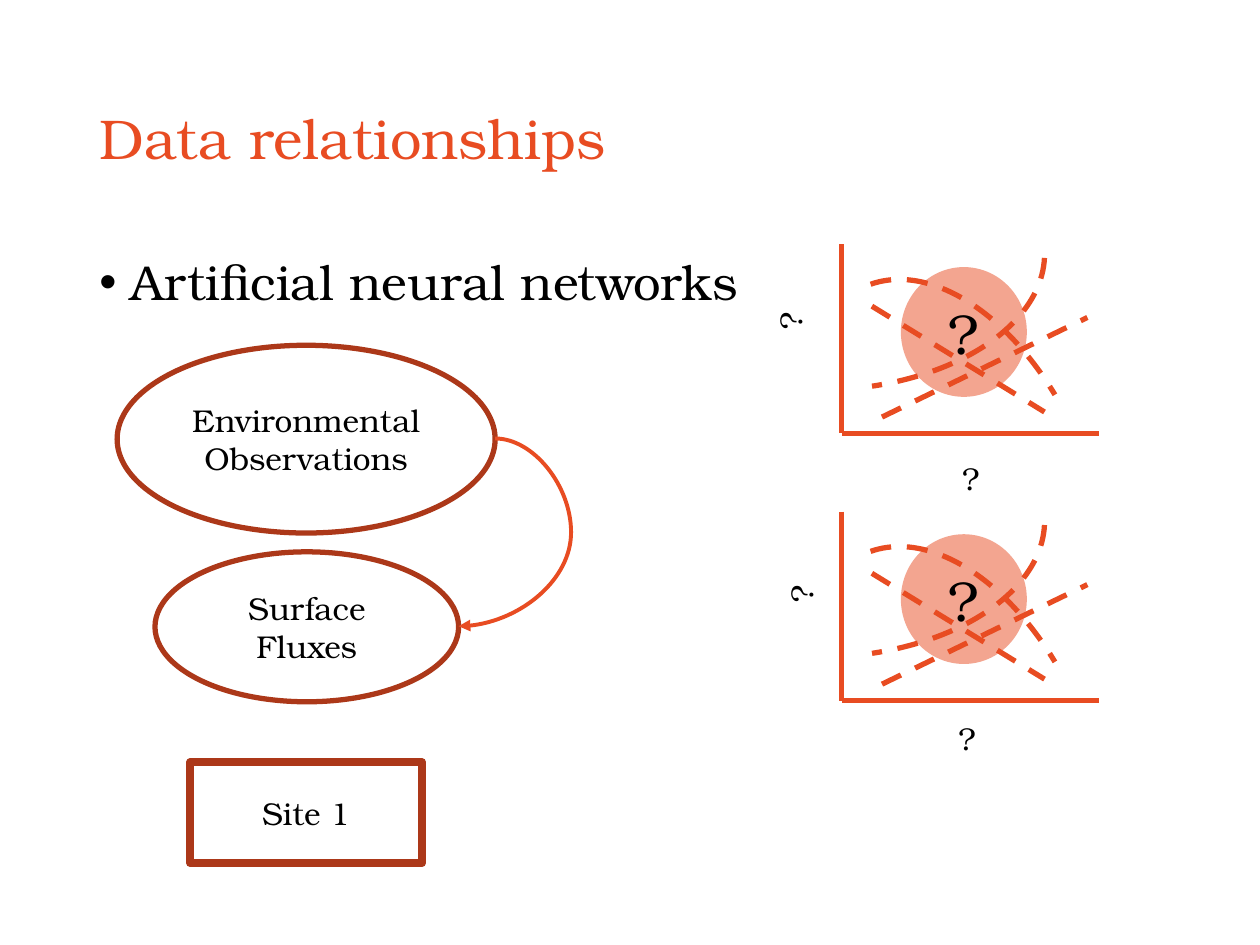
from dataclasses import dataclass
from typing import NamedTuple, Optional

from lxml.etree import SubElement
from pptx import Presentation
from pptx.dml.color import RGBColor
from pptx.enum.dml import MSO_LINE
from pptx.enum.shapes import MSO_CONNECTOR, MSO_SHAPE
from pptx.enum.text import MSO_ANCHOR, PP_ALIGN
from pptx.oxml.ns import qn
from pptx.util import Pt

PX = 9144


@dataclass(frozen=True)
class Theme:
    font: str = "TeX Gyre Bonum"
    accent: RGBColor = RGBColor(0xE8, 0x4C, 0x22)
    outline: RGBColor = RGBColor(0xAC, 0x38, 0x19)
    ink: RGBColor = RGBColor(0, 0, 0)
    title: int = 32
    body: int = 28
    label: int = 18


THEME = Theme()


class Box(NamedTuple):
    x: int
    y: int
    w: int
    h: int

    def emu(self):
        return [v * PX for v in self]

    def down(self, dy: int) -> "Box":
        return self._replace(y=self.y + dy)


class Segment(NamedTuple):
    x1: int
    y1: int
    x2: int
    y2: int

    def down(self, dy: int) -> "Segment":
        return Segment(self.x1, self.y1 + dy, self.x2, self.y2 + dy)


class Node(NamedTuple):
    shape: MSO_SHAPE
    box: Box
    text: str
    width: float


class Arc(NamedTuple):
    box: Box
    rotation: float


class Panel(NamedTuple):
    dy: int
    x_label: Box
    y_label: Box


NODES = [
    Node(MSO_SHAPE.OVAL, Box(93, 274, 300, 149), "Environmental Observations", 3),
    Node(MSO_SHAPE.OVAL, Box(123, 438, 241, 119), "Surface Fluxes", 3),
    Node(MSO_SHAPE.RECTANGLE, Box(151, 605, 184, 80), "Site 1", 4.5),
]
PANELS = [
    Panel(0, Box(682, 359, 177, 40), Box(539, 235, 176, 40)),
    Panel(212, Box(679, 566, 177, 40), Box(533, 451, 206, 40)),
]
AXES = [Segment(668, 194, 668, 344), Segment(872, 344, 668, 344)]
TRENDS = [Segment(700, 331, 863, 252), Segment(692, 243, 829, 327)]
ARCS = [Arc(Box(538, 19, 217, 365), 90), Arc(Box(649, 213, 217, 365), 337.6)]
ARC_ADJUSTMENTS = (162.61, 201.93)
CIRCLE = Box(715, 212, 100, 103)
FLOW = Segment(393, 348, 364, 497)
FLOW_BEND = -207600


def apply(target, values: dict) -> None:
    for name, value in values.items():
        setattr(target, name, value)


def write(sp, text: str, size: int, color: RGBColor = THEME.ink,
          align: PP_ALIGN = PP_ALIGN.CENTER,
          anchor: MSO_ANCHOR = MSO_ANCHOR.MIDDLE,
          spacing: float = 1.0, bullet: Optional[str] = None) -> None:
    tf = sp.text_frame
    apply(tf, {"word_wrap": True, "vertical_anchor": anchor})
    p = tf.paragraphs[0]
    apply(p, {"alignment": align, "line_spacing": spacing})
    if bullet:
        p_pr = p._p.get_or_add_pPr()
        p_pr.set("marL", str(25 * PX))
        p_pr.set("indent", str(-25 * PX))
        SubElement(p_pr, qn("a:buFont")).set("typeface", "Arial")
        SubElement(p_pr, qn("a:buChar")).set("char", bullet)
    r = p.add_run()
    r.text = text
    apply(r.font, {"name": THEME.font, "size": Pt(size)})
    r.font.color.rgb = color


def stroke(line, color: RGBColor, width: float, dashed: bool = False) -> None:
    line.color.rgb = color
    line.width = Pt(width)
    if dashed:
        line.dash_style = MSO_LINE.DASH


def add_text(s, box: Box, text: str, size: int, rotation: float = 0, **style) -> None:
    sp = s.shapes.add_textbox(*box.emu())
    sp.rotation = rotation
    write(sp, text, size, **style)


def add_plain(s, shape: MSO_SHAPE, box: Box):
    sp = s.shapes.add_shape(shape, *box.emu())
    sp.shadow.inherit = False
    sp.fill.background()
    return sp


def add_node(s, node: Node) -> None:
    sp = add_plain(s, node.shape, node.box)
    stroke(sp.line, THEME.outline, node.width)
    write(sp, node.text, THEME.label)


def add_line(s, seg: Segment, width: float = 3, dashed: bool = False,
             kind: MSO_CONNECTOR = MSO_CONNECTOR.STRAIGHT):
    line = s.shapes.add_connector(kind, *[v * PX for v in seg])
    stroke(line.line, THEME.accent, width, dashed)
    SubElement(line._element.spPr, qn("a:effectLst"))
    return line


def add_flow(s) -> None:
    line = add_line(s, FLOW, 2.25, kind=MSO_CONNECTOR.CURVE)
    guides = line._element.spPr.find(qn("a:prstGeom")).find(qn("a:avLst"))
    guide = SubElement(guides, qn("a:gd"))
    guide.set("name", "adj1")
    guide.set("fmla", f"val {FLOW_BEND}")
    SubElement(line.line._get_or_add_ln(), qn("a:tailEnd")).set("type", "triangle")


def add_circle(s, box: Box) -> None:
    sp = add_plain(s, MSO_SHAPE.OVAL, box)
    sp.fill.solid()
    sp.fill.fore_color.rgb = THEME.accent
    color = sp._element.spPr.find(qn("a:solidFill")).find(qn("a:srgbClr"))
    SubElement(color, qn("a:alpha")).set("val", "50000")
    sp.line.fill.background()
    write(sp, "?", THEME.title)


def add_arc(s, arc: Arc, dy: int) -> None:
    sp = add_plain(s, MSO_SHAPE.ARC, arc.box.down(dy))
    sp.rotation = arc.rotation
    for i, value in enumerate(ARC_ADJUSTMENTS):
        sp.adjustments[i] = value
    stroke(sp.line, THEME.accent, 3, dashed=True)


def add_panel(s, panel: Panel) -> None:
    for axis in AXES:
        add_line(s, axis.down(panel.dy))
    add_text(s, panel.x_label, "?", THEME.label, anchor=MSO_ANCHOR.TOP)
    add_text(s, panel.y_label, "?", THEME.label, 270, anchor=MSO_ANCHOR.TOP)
    add_circle(s, CIRCLE.down(panel.dy))
    for arc in ARCS:
        add_arc(s, arc, panel.dy)
    for trend in TRENDS:
        add_line(s, trend.down(panel.dy), dashed=True)


def main() -> None:
    prs = Presentation()
    apply(prs, {"slide_width": 1000 * PX, "slide_height": 750 * PX})
    s = prs.slides.add_slide(prs.slide_layouts[6])
    add_text(s, Box(69, 40, 862, 145), "Data relationships", THEME.title,
             color=THEME.accent, align=PP_ALIGN.LEFT, spacing=0.9)
    add_text(s, Box(69, 200, 862, 476), "Artificial neural networks", THEME.body,
             align=PP_ALIGN.LEFT, anchor=MSO_ANCHOR.TOP, spacing=0.9, bullet="•")
    for node in NODES:
        add_node(s, node)
    add_flow(s)
    for panel in PANELS:
        add_panel(s, panel)
    prs.save("out.pptx")


if __name__ == "__main__":
    main()
